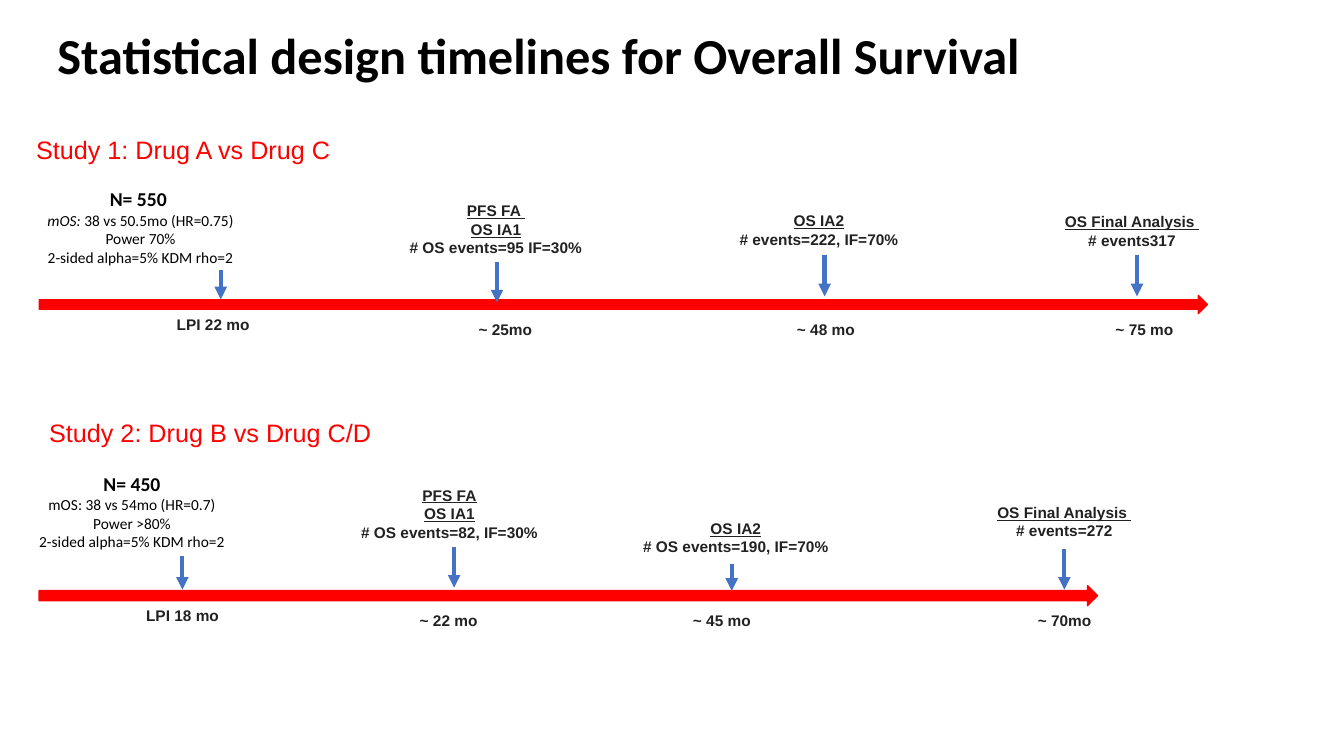
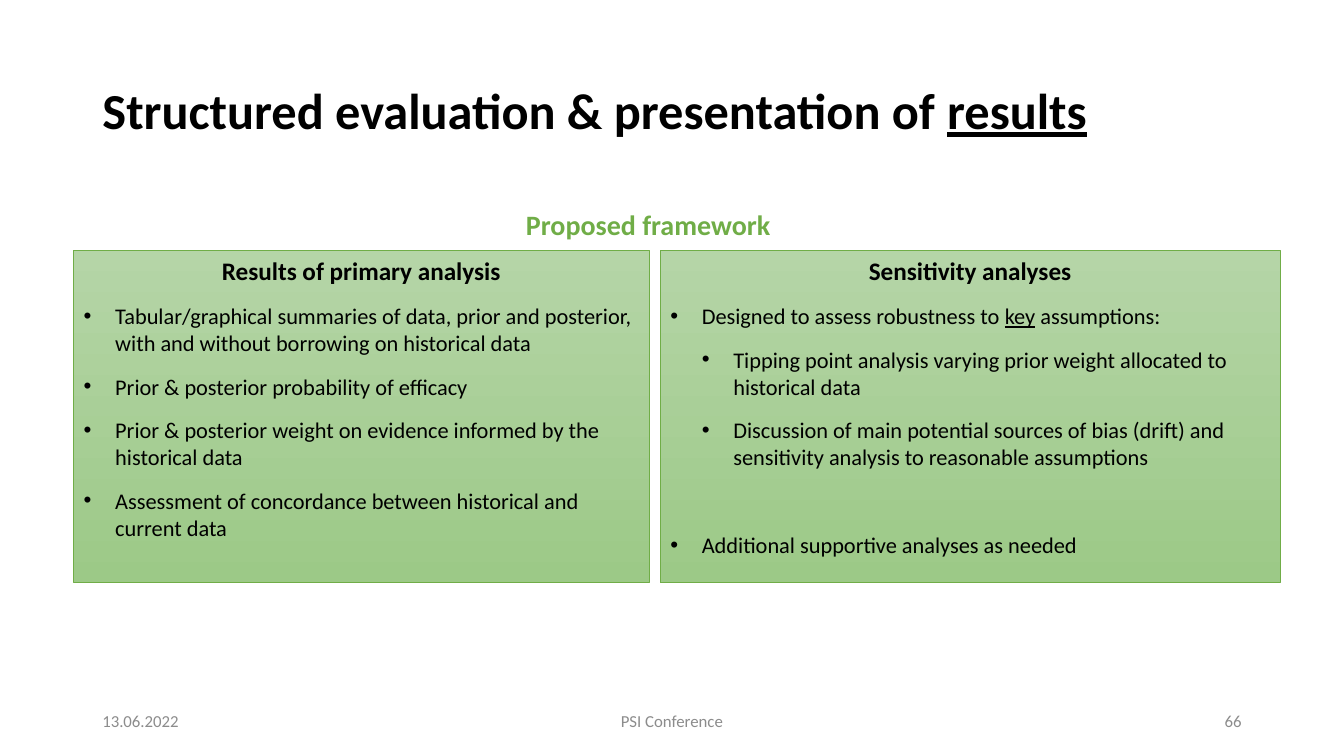
from collections import namedtuple

from lxml.etree import SubElement
from pptx import Presentation
from pptx.dml.color import RGBColor
from pptx.enum.shapes import MSO_CONNECTOR as Connector, MSO_SHAPE as Shape
from pptx.enum.text import MSO_ANCHOR as Anchor, MSO_AUTO_SIZE as AutoSize, PP_ALIGN as Align
from pptx.oxml.ns import qn
from pptx.util import Pt

# Colours
BLACK = RGBColor(0, 0, 0)
INK = RGBColor(0x21, 0x21, 0x21)
GREY = RGBColor(0x8C, 0x8C, 0x8C)
RED = RGBColor(0xFF, 0, 0)
BLUE = RGBColor(0x44, 0x72, 0xC4)
GREEN = RGBColor(0x70, 0xAD, 0x47)
PANEL_TOP = RGBColor(0xB5, 0xD5, 0xA7)
PANEL_BOTTOM = RGBColor(0x9C, 0xC9, 0x87)

# Text styles
TITLE = dict(name="Calibri", size=Pt(36), bold=True, color=BLACK)
STUDY = dict(name="Arial", size=Pt(18), color=RED)
EVENT = dict(name="Arial", size=Pt(11), bold=True, color=INK)
EVENT_HEAD = EVENT | dict(underline=True)
SAMPLE = dict(name="Calibri", size=Pt(14), bold=True, color=BLACK)
DESIGN = dict(name="Calibri", size=Pt(11), color=BLACK)
FRAMEWORK = dict(name="Calibri", size=Pt(20), bold=True, color=GREEN)
PANEL_HEAD = dict(name="Calibri", size=Pt(18), bold=True, color=BLACK)
ITEM = dict(name="Calibri", size=Pt(16), bold=False, color=BLACK)
FOOTER = dict(name="Calibri", size=Pt(12), color=GREY)

LABEL_WIDTH, TIME_WIDTH = 195, 140
INDENT = 22.5
BAR_LEFT = 28

# label: (centre, top, lines); arrow: (x, top, bottom); time: (centre, top, text)
Milestone = namedtuple("Milestone", "label arrow time")


def event(*heads, count):
    """Lines of a milestone label: underlined heads, then the event count."""
    return [[(head, EVENT_HEAD)] for head in heads] + [[(count, EVENT)]]


def design(sample, survival, power):
    """Lines of the design label at the start of a timeline."""
    return [[(sample, SAMPLE)], survival, [(power, DESIGN)],
            [("2-sided alpha=5% KDM rho=2", DESIGN)]]


STUDIES = [
    dict(
        heading=("Study 1: Drug A vs Drug C", 18.7, 92.2),
        bar=(211, 834.5, 13),
        milestones=[
            Milestone((100.4, 130.3, design(
                "N= 550 ",
                [("mOS:", DESIGN | dict(italic=True)), (" 38 vs 50.5mo (HR=0.75)", DESIGN)],
                "Power 70%")),
                (157.7, 193, 213.8), (152.3, 221.8, "LPI 22 mo")),
            Milestone((354.2, 140.4, event("PFS FA ", "OS IA1", count="# OS events=95 IF=30%")),
                      (355, 187.2, 216), (361, 224.8, "~ 25mo")),
            Milestone((585, 147.6, event("OS IA2", count="# events=222, IF=70%")),
                      (589, 182.2, 211.7), (590, 225.4, "~ 48 mo")),
            Milestone((808.6, 148.3, event("OS Final Analysis ", count="# events317")),
                      (812.2, 182.2, 211.7), (817.5, 225, "~ 75 mo")),
        ]),
    dict(
        heading=("Study 2: Drug B vs Drug C/D", 28, 294.5),
        bar=(418.3, 756, 14.4),
        milestones=[
            Milestone((94.3, 333.4, design(
                "N= 450", [("mOS: 38 vs 54mo (HR=0.7)", DESIGN)], "Power >80%")),
                (130.3, 397.4, 421.2), (130.4, 429.1, "LPI 18 mo")),
            Milestone((321.1, 343.4, event("PFS FA", "OS IA1", count="# OS events=82, IF=30%")),
                      (324.4, 391, 419.8), (320.5, 432.7, "~ 22 mo")),
            Milestone((525.6, 367.2, event("OS IA2", count="# OS events=190, IF=70%")),
                      (522.7, 403.2, 422), (515.7, 432.7, "~ 45 mo")),
            Milestone((760.3, 355.7, event("OS Final Analysis ", count="# events=272")),
                      (760.3, 392.4, 421.2), (760.5, 432.7, "~ 70mo")),
        ]),
]

# Panels: left, width, heading, items of (level, space before, spans)
PANELS = [
    (52.6, 411, "Results of primary analysis", [
        (1, 12, [("Tabular/graphical summaries of data, prior and posterior, "
                  "with and without borrowing on historical data", ITEM)]),
        (1, 12, [("Prior & posterior probability of efficacy", ITEM)]),
        (1, 12, [("Prior & posterior weight on evidence informed by the historical data", ITEM)]),
        (1, 12, [("Assessment of concordance between historical and current data", ITEM)]),
    ]),
    (471.6, 442.8, "Sensitivity analyses", [
        (1, 12, [("Designed to assess robustness to ", ITEM),
                 ("key", ITEM | dict(underline=True)), (" assumptions:", ITEM)]),
        (2, 12, [("Tipping point analysis varying prior weight allocated to historical data", ITEM)]),
        (2, 12, [("Discussion of main potential sources of bias (drift) and "
                  "sensitivity analysis to reasonable assumptions", ITEM)]),
        (1, 43.5, [("Additional supportive analyses as needed", ITEM)]),
    ]),
]

FOOTERS = [
    (66, 216, "13.06.2022", Align.LEFT),
    (318, 324, "PSI Conference", Align.CENTER),
    (678, 216, "66", Align.RIGHT),
]


# Text helpers
def apply_format(font, style):
    for name, value in style.items():
        if name == "color":
            font.color.rgb = value
        else:
            setattr(font, name, value)


def fill_para(para, spans, align=Align.LEFT):
    para.alignment = align
    for text, style in spans:
        span = para.add_run()
        span.text = text
        apply_format(span.font, style)


def next_para(frame, index):
    return frame.add_paragraph() if index else frame.paragraphs[0]


def place(shape, left, top, width, height):
    for name, value in dict(left=left, top=top, width=width, height=height).items():
        setattr(shape, name, Pt(value))


def add_text(page, left, top, width, height, lines, align=Align.LEFT, anchor=Anchor.TOP):
    box = page.shapes.add_textbox(Pt(left), Pt(top), Pt(width), Pt(height))
    frame = box.text_frame
    frame.word_wrap = True
    frame.vertical_anchor = anchor
    for index, spans in enumerate(lines):
        fill_para(next_para(frame, index), spans, align)


def set_title(page, area, spans, anchor, margins=None):
    title = page.shapes.title
    place(title, *area)
    frame = title.text_frame
    frame.auto_size = AutoSize.NONE
    frame.vertical_anchor = anchor
    for side, value in (margins or {}).items():
        setattr(frame, f"margin_{side}", Pt(value))
    para = frame.paragraphs[0]
    para.line_spacing = 0.9
    fill_para(para, spans)


# Timeline parts
def add_bar(page, top, width, height):
    bar = page.shapes.add_shape(Shape.RIGHT_ARROW, Pt(BAR_LEFT), Pt(top), Pt(width), Pt(height))
    bar.shadow.inherit = False
    bar.fill.solid()
    bar.fill.fore_color.rgb = RED
    bar.line.color.rgb = RED
    bar.line.width = Pt(1)


def add_down_arrow(page, x, top, bottom):
    arrow = page.shapes.add_connector(Connector.STRAIGHT, Pt(x), Pt(top), Pt(x), Pt(bottom))
    arrow.line.color.rgb = BLUE
    arrow.line.width = Pt(3)
    SubElement(arrow.line._get_or_add_ln(), qn("a:tailEnd"), type="triangle")
    SubElement(arrow._element.spPr, qn("a:effectLst"))


def add_milestone(page, milestone):
    centre, top, lines = milestone.label
    add_text(page, centre - LABEL_WIDTH / 2, top, LABEL_WIDTH, 7.2 + 13.4 * len(lines),
             lines, Align.CENTER)
    add_down_arrow(page, *milestone.arrow)
    centre, top, text = milestone.time
    add_text(page, centre - TIME_WIDTH / 2, top, TIME_WIDTH, 20.6,
             [[(text, EVENT)]], Align.CENTER)


def add_study(page, study):
    text, left, top = study["heading"]
    add_text(page, left, top, 320, 29, [[(text, STUDY)]])
    add_bar(page, *study["bar"])
    for milestone in study["milestones"]:
        add_milestone(page, milestone)


# Panel parts
def set_bullet(para, level):
    """Level 0 has no bullet; deeper levels hang by one indent."""
    props = para._p.get_or_add_pPr()
    props.set("marL", str(Pt(INDENT * level)))
    props.set("indent", str(-Pt(INDENT) if level else 0))
    if level:
        SubElement(props, qn("a:buFont"), typeface="Arial")
        SubElement(props, qn("a:buChar"), char="•")
    else:
        SubElement(props, qn("a:buNone"))


def fill_panel(panel, left, width, heading, items):
    place(panel, left, 178.6, width, 237.6)
    panel.fill.gradient()
    panel.fill.gradient_angle = 270
    for stop, colour in zip(panel.fill.gradient_stops, (PANEL_TOP, PANEL_BOTTOM)):
        stop.color.rgb = colour
    panel.line.color.rgb = GREEN
    panel.line.width = Pt(0.5)
    frame = panel.text_frame
    frame.auto_size = AutoSize.NONE
    rows = [(0, 0, [(heading, PANEL_HEAD)])] + items
    for index, (level, gap, spans) in enumerate(rows):
        para = next_para(frame, index)
        set_bullet(para, level)
        para.space_before = Pt(gap)
        fill_para(para, spans, Align.LEFT if level else Align.CENTER)


# Slides
def build_timelines(deck):
    page = deck.slides.add_slide(deck.slide_layouts.get_by_name("Title Only"))
    set_title(page, (41, 22.3, 898.6, 39.6),
              [("Statistical design timelines for Overall Survival", TITLE)],
              Anchor.TOP, dict(left=0, top=0, right=0, bottom=0))
    for study in STUDIES:
        add_study(page, study)


def build_framework(deck):
    page = deck.slides.add_slide(deck.slide_layouts.get_by_name("Two Content"))
    set_title(page, (66, 28.8, 828, 104.4),
              [("Structured evaluation & presentation of ", TITLE),
               ("results", TITLE | dict(underline=True))], Anchor.MIDDLE)
    add_text(page, 368.6, 144.7, 221, 31.7, [[("Proposed framework", FRAMEWORK)]])
    for index, panel in enumerate(PANELS, start=1):
        fill_panel(page.placeholders[index], *panel)
    for left, width, text, align in FOOTERS:
        add_text(page, left, 500.4, width, 28.8, [[(text, FOOTER)]], align, Anchor.MIDDLE)


def main():
    deck = Presentation()
    deck.slide_width, deck.slide_height = Pt(960), Pt(540)
    build_timelines(deck)
    build_framework(deck)
    deck.save("out.pptx")


if __name__ == "__main__":
    main()
